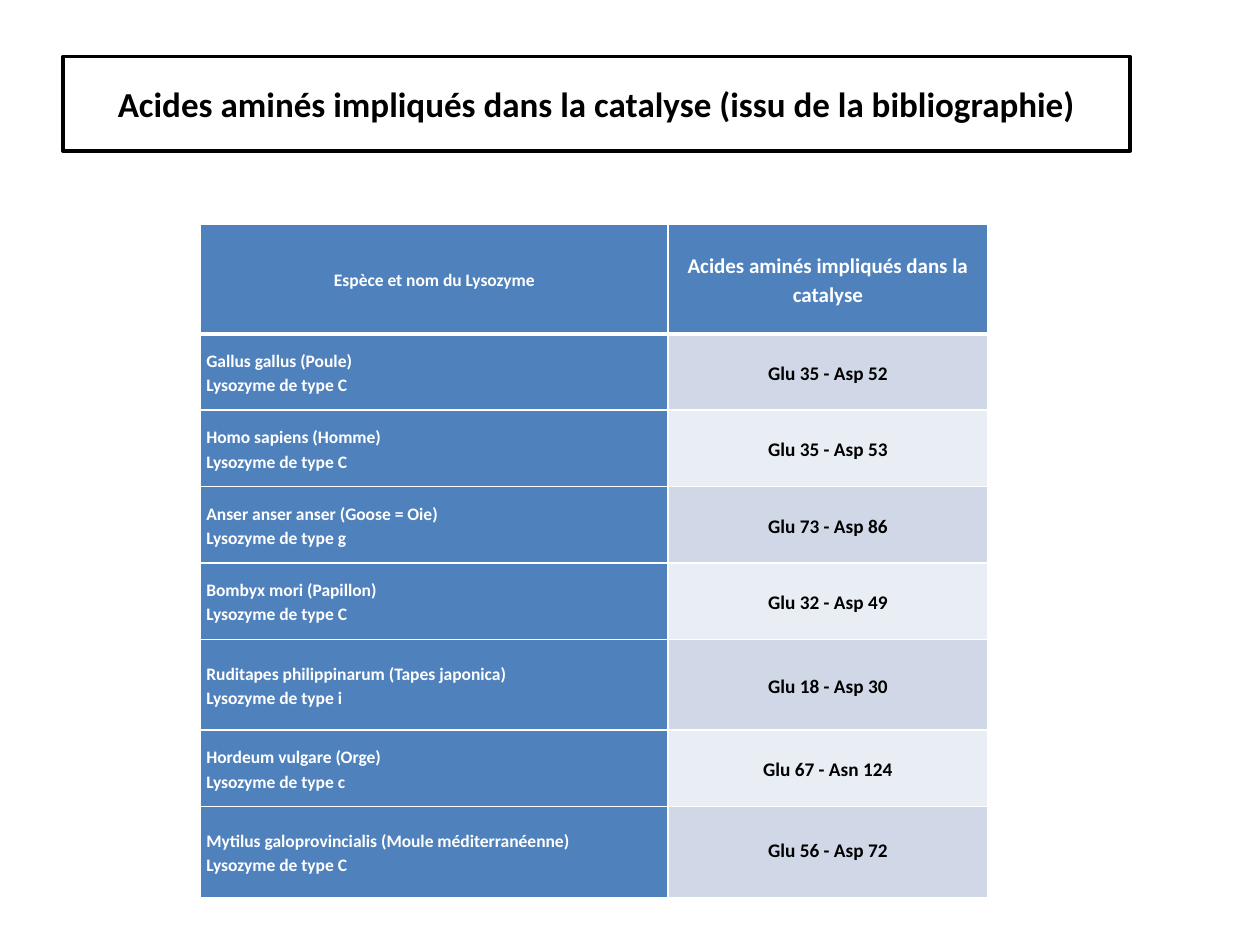
from lxml.etree import SubElement
from pptx import Presentation
from pptx.dml.color import RGBColor
from pptx.enum.shapes import MSO_SHAPE
from pptx.enum.text import MSO_ANCHOR, PP_ALIGN
from pptx.oxml.ns import qn
from pptx.util import Cm, Pt

COLORS = {
    "black": "000000",
    "white": "FFFFFF",
    "blue": "4F81BD",
    "band_dark": "D0D8E8",
    "band_light": "E9EDF4",
}
HEADERS = ("Espèce et nom du Lysozyme", "Acides aminés impliqués dans la catalyse")
LYSOZYMES = [
    ("Gallus gallus (Poule)", "C", "Glu 35 - Asp 52", 1.54),
    ("Homo sapiens (Homme)", "C", "Glu 35 - Asp 53", 1.54),
    ("Anser anser anser (Goose = Oie)", "g", "Glu 73 - Asp 86", 1.54),
    ("Bombyx mori (Papillon)", "C", "Glu 32 - Asp 49", 1.54),
    ("Ruditapes philippinarum (Tapes japonica)", "i", "Glu 18 - Asp 30", 1.83),
    ("Hordeum vulgare (Orge)", "c", "Glu 67 - Asn 124", 1.54),
    ("Mytilus galoprovincialis (Moule méditerranéenne)", "C", "Glu 56 - Asp 72", 1.83),
]


def write_text(text_frame, text, size, color, align=PP_ALIGN.CENTER, spacing=1.15):
    for index, line in enumerate(text.split("\n")):
        paragraph = text_frame.paragraphs[0] if index == 0 else text_frame.add_paragraph()
        paragraph.alignment = align
        paragraph.line_spacing = spacing
        run = paragraph.add_run()
        run.text = line
        run.font.name = "Calibri"
        run.font.size = Pt(size)
        run.font.bold = True
        run.font.color.rgb = RGBColor.from_string(COLORS[color])


def set_borders(cell, widths):
    properties = cell._tc.get_or_add_tcPr()
    for side, width in widths.items():
        line = SubElement(properties, qn(f"a:ln{side}"), w=str(Pt(width)))
        fill = SubElement(line, qn("a:solidFill"))
        SubElement(fill, qn("a:srgbClr"), val=COLORS["white"])


presentation = Presentation()
presentation.slide_width = Cm(25.4)
presentation.slide_height = Cm(19.05)
slide = presentation.slides.add_slide(presentation.slide_layouts[6])

title = slide.shapes.add_shape(MSO_SHAPE.RECTANGLE, Cm(1.27), Cm(1.14), Cm(21.51), Cm(1.91))
title.shadow.inherit = False
title.fill.solid()
title.fill.fore_color.rgb = RGBColor.from_string(COLORS["white"])
title.line.color.rgb = RGBColor.from_string(COLORS["black"])
title.line.width = Pt(2)
title.text_frame.word_wrap = True
title.text_frame.vertical_anchor = MSO_ANCHOR.MIDDLE
write_text(
    title.text_frame,
    "Acides aminés impliqués dans la catalyse (issu de la bibliographie)",
    size=20,
    color="black",
    spacing=1.0,
)

heights = [2.21] + [height for *_, height in LYSOZYMES]
table = slide.shapes.add_table(
    len(heights), 2, Cm(4.04), Cm(4.52), Cm(15.87), Cm(sum(heights))
).table
table.columns[0].width = Cm(9.43)
table.columns[1].width = Cm(6.44)

for row_index, height in enumerate(heights):
    table.rows[row_index].height = Cm(height)
    for column_index in range(2):
        cell = table.cell(row_index, column_index)
        cell.margin_left = cell.margin_right = Cm(0.12)
        cell.margin_top = cell.margin_bottom = 0
        cell.vertical_anchor = MSO_ANCHOR.MIDDLE
        top = 3 if row_index == 1 else 1
        bottom = 3 if row_index == 0 else 1
        set_borders(cell, {"L": 1, "R": 1, "T": top, "B": bottom})
        if row_index == 0 or column_index == 0:
            background = "blue"
        else:
            background = "band_dark" if row_index % 2 else "band_light"
        cell.fill.solid()
        cell.fill.fore_color.rgb = RGBColor.from_string(COLORS[background])

for column_index, (header, size) in enumerate(zip(HEADERS, (10, 12))):
    write_text(table.cell(0, column_index).text_frame, header, size=size, color="white")

for row_index, (species, kind, residues, height) in enumerate(LYSOZYMES, start=1):
    write_text(
        table.cell(row_index, 0).text_frame,
        f"{species}\nLysozyme de type {kind}",
        size=10,
        color="white",
        align=PP_ALIGN.LEFT,
    )
    spacing = Pt(12.7) if row_index == len(LYSOZYMES) else 1.15
    write_text(
        table.cell(row_index, 1).text_frame, residues, size=11, color="black", spacing=spacing
    )

presentation.save("out.pptx")
